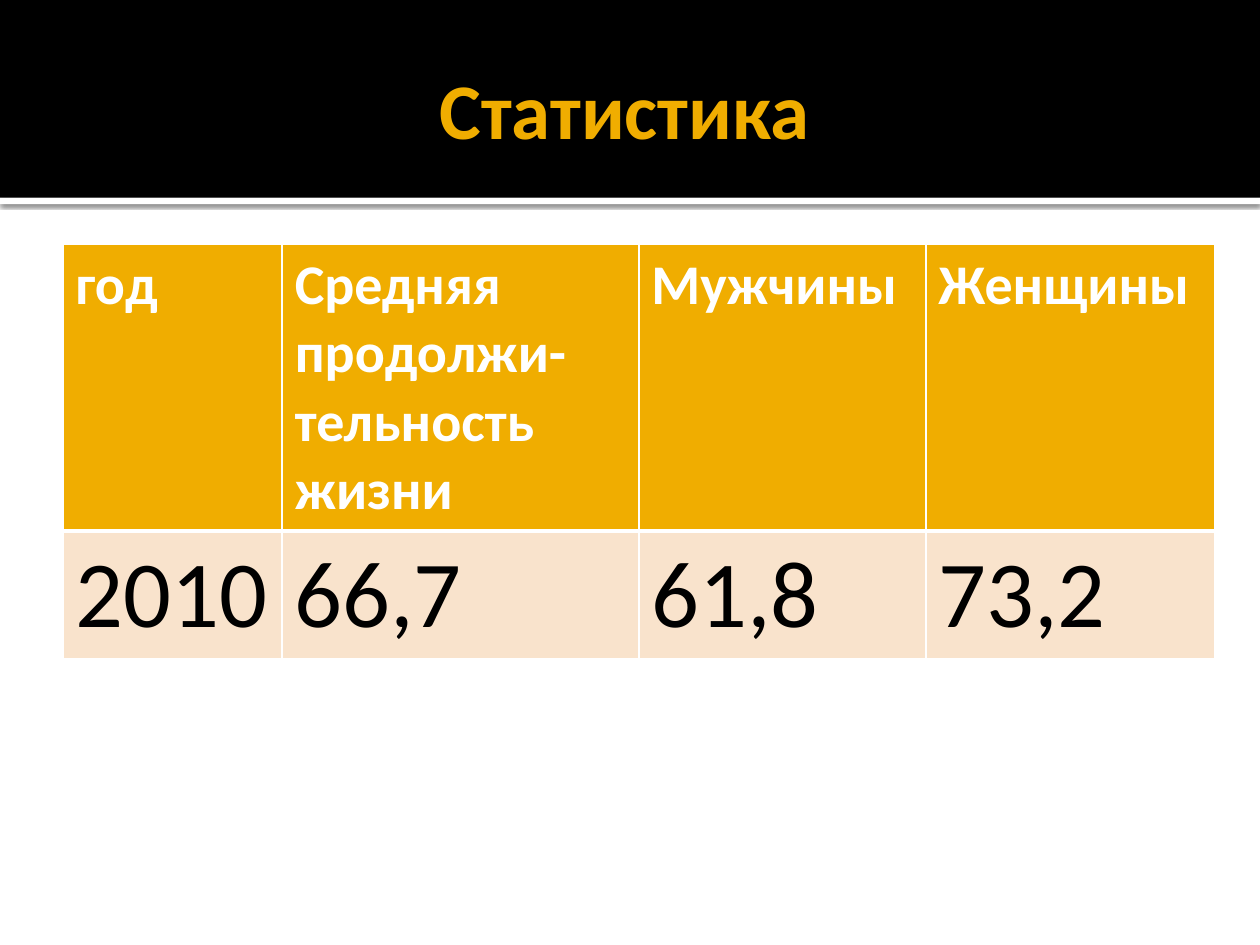
from lxml.etree import SubElement
from pptx import Presentation
from pptx.dml.color import RGBColor
from pptx.enum.shapes import MSO_SHAPE
from pptx.enum.text import MSO_ANCHOR, PP_ALIGN
from pptx.oxml.ns import qn
from pptx.util import Inches, Pt

COLORS = {
    "black": "000000",
    "white": "FFFFFF",
    "accent": "F0AD00",
    "pale": "F9E3CC",
}
FONT = "Calibri"
WIDTH, HEIGHT = 10, 7.5
BAND_HEIGHT, RULE_HEIGHT = 1.57, 0.05
HEADINGS = ["год", "Средняя продолжи-тельность жизни", "Мужчины", "Женщины"]
FIGURES = ["2010", "66,7", "61,8", "73,2"]
COLUMN_WIDTHS = [1.74, 2.83, 2.28, 2.29]
ROW_HEIGHTS = [2.26, 1.0]


def rgb(name):
    return RGBColor.from_string(COLORS[name])


def format_text(paragraph, size, color, bold):
    for run in paragraph.runs:
        run.font.name = FONT
        run.font.size = Pt(size)
        run.font.bold = bold
        run.font.color.rgb = rgb(color)


def add_color(parent, name):
    return SubElement(parent, qn("a:srgbClr"), val=COLORS[name])


def add_strip(slide, box, color):
    strip = slide.shapes.add_shape(MSO_SHAPE.RECTANGLE, *map(Inches, box))
    strip.shadow.inherit = False
    strip.fill.solid()
    strip.fill.fore_color.rgb = rgb(color)
    strip.line.fill.background()
    return strip


def add_shadow(strip):
    effects = strip._element.spPr.find(qn("a:effectLst"))
    shadow = SubElement(
        effects, qn("a:outerShdw"), blurRad=str(Pt(2.5)), dist=str(Pt(0.8)),
        dir="5400000", algn="tl", rotWithShape="0",
    )
    SubElement(add_color(shadow, "black"), qn("a:alpha"), val="60000")


def add_header(slide, left, top, width):
    rule = add_strip(slide, (left, top + BAND_HEIGHT, width, RULE_HEIGHT), "white")
    add_shadow(rule)
    add_strip(slide, (left, top, width, BAND_HEIGHT), "black")

    title = slide.shapes.title
    slide.shapes._spTree.append(title._element)
    title.left, title.top = Inches(left + width * 0.05), Inches(top + 0.17)
    title.width, title.height = Inches(width * 0.9), Inches(1.37)
    frame = title.text_frame
    frame.text = "Статистика "
    frame.word_wrap = True
    frame.vertical_anchor = MSO_ANCHOR.MIDDLE
    frame.margin_left = Inches(0.1)
    frame.margin_right = frame.margin_top = frame.margin_bottom = Inches(0.05)
    heading = frame.paragraphs[0]
    heading.alignment = PP_ALIGN.CENTER
    format_text(heading, 45, "accent", True)


def format_cell(cell, text, size, color, bold, fill, bottom_border):
    cell.text = text
    format_text(cell.text_frame.paragraphs[0], size, color, bold)
    properties = cell._tc.get_or_add_tcPr()
    for side, points in zip("LRTB", (1, 1, 1, bottom_border)):
        border = SubElement(properties, qn(f"a:ln{side}"), w=str(Pt(points)))
        add_color(SubElement(border, qn("a:solidFill")), "white")
    cell.fill.solid()
    cell.fill.fore_color.rgb = rgb(fill)


def add_statistics(slide, left, top):
    statistics = slide.shapes.add_table(
        2, len(HEADINGS), Inches(left), Inches(top),
        Inches(sum(COLUMN_WIDTHS)), Inches(sum(ROW_HEIGHTS)),
    ).table
    for column, width in zip(statistics.columns, COLUMN_WIDTHS):
        column.width = Inches(width)
    for row, height in zip(statistics.rows, ROW_HEIGHTS):
        row.height = Inches(height)
    for index, (heading, figure) in enumerate(zip(HEADINGS, FIGURES)):
        format_cell(statistics.cell(0, index), heading, 32, "white", True, "accent", 3)
        format_cell(statistics.cell(1, index), figure, 54, "black", False, "pale", 1)
    for cell in statistics.rows[1].cells:
        top_border = cell._tc.tcPr.find(qn("a:lnT"))
        top_border.set("w", str(Pt(3)))


def main():
    presentation = Presentation()
    presentation.slide_width = Inches(WIDTH)
    presentation.slide_height = Inches(HEIGHT)
    slide = presentation.slides.add_slide(presentation.slide_layouts[5])
    slide.background.fill.solid()
    slide.background.fill.fore_color.rgb = rgb("white")
    add_header(slide, 0, 0, WIDTH)
    add_statistics(slide, WIDTH * 0.05, 1.94)
    presentation.save("out.pptx")


if __name__ == "__main__":
    main()
